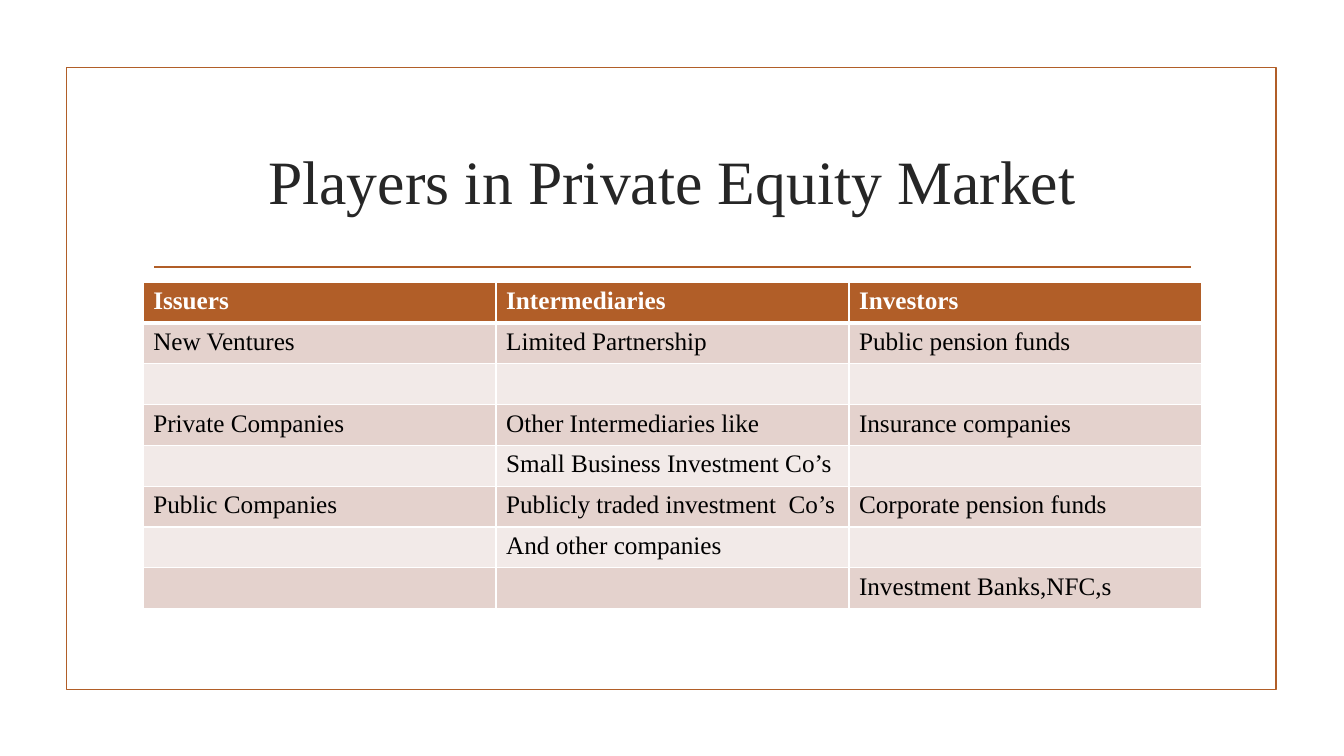
from lxml import etree
from pptx import Presentation
from pptx.dml.color import RGBColor
from pptx.enum.shapes import MSO_CONNECTOR, MSO_SHAPE
from pptx.enum.text import MSO_ANCHOR, PP_ALIGN
from pptx.oxml.ns import qn
from pptx.util import Inches, Pt

RECT = MSO_SHAPE.RECTANGLE
STRAIGHT = MSO_CONNECTOR.STRAIGHT
MIDDLE = MSO_ANCHOR.MIDDLE
CENTER = PP_ALIGN.CENTER

RUST = RGBColor(0xB1, 0x5E, 0x28)
ROSE = RGBColor(0xE4, 0xD2, 0xCD)
PALE = RGBColor(0xF2, 0xEA, 0xE8)
WHITE = RGBColor(0xFF, 0xFF, 0xFF)
BLACK = RGBColor(0, 0, 0)
CHARCOAL = RGBColor(0x26, 0x26, 0x26)
FONT = "Times New Roman"

LEFT, WIDTH = Inches(1.42), Inches(10.5)
ROW_H = Inches(0.405)
ROWS = [
    ("Issuers", "Intermediaries", "Investors"),
    ("New Ventures", "Limited Partnership", "Public pension funds"),
    ("", "", ""),
    ("Private Companies", "Other Intermediaries like", "Insurance companies"),
    ("", "Small Business Investment Co’s", ""),
    ("Public Companies", "Publicly traded investment  Co’s", "Corporate pension funds"),
    ("", "And other companies", ""),
    ("", "", "Investment Banks,NFC,s"),
]


def set_font(p, size, color, bold=False):
    p.font.name = FONT
    p.font.size = Pt(size)
    p.font.bold = bold
    p.font.color.rgb = color


def add_border(cell, side, width):
    ln = etree.SubElement(cell._tc.get_or_add_tcPr(), qn(f"a:ln{side}"), w=str(Pt(width)))
    fill = etree.SubElement(ln, qn("a:solidFill"))
    etree.SubElement(fill, qn("a:srgbClr"), val=str(WHITE))


prs = Presentation()
prs.slide_width, prs.slide_height = Inches(13.33), Inches(7.5)
s = prs.slides.add_slide(prs.slide_layouts[5])

frame = s.shapes.add_shape(RECT, Inches(0.66), Inches(0.67), Inches(12), Inches(6.17))
frame.shadow.inherit = False
frame.fill.background()
frame.line.color.rgb = RUST
frame.line.width = Pt(1.25)

rule = s.shapes.add_connector(STRAIGHT, Inches(1.53), Inches(2.65), Inches(11.81), Inches(2.65))
rule.line.color.rgb = RUST
rule.line.width = Pt(1.25)
etree.SubElement(rule._element.spPr, qn("a:effectLst"))

title = s.shapes.title
title.left, title.top, title.width, title.height = LEFT, Inches(1.07), WIDTH, Inches(1.43)
tf = title.text_frame
tf.text = "Players in Private Equity Market"
tf.vertical_anchor = MIDDLE
p = tf.paragraphs[0]
p.alignment = CENTER
set_font(p, 44, CHARCOAL)

table = s.shapes.add_table(len(ROWS), 3, LEFT, Inches(2.8), WIDTH, ROW_H * len(ROWS)).table
for i, row in enumerate(ROWS):
    table.rows[i].height = ROW_H
    header = i == 0
    for j, text in enumerate(row):
        cell = table.cell(i, j)
        cell.text = text
        set_font(cell.text_frame.paragraphs[0], 18, WHITE if header else BLACK, header)
        for side in "LRTB":
            under_header = (i, side) in ((0, "B"), (1, "T"))
            add_border(cell, side, 3 if under_header else 1)
        cell.fill.solid()
        cell.fill.fore_color.rgb = RUST if header else ROSE if i % 2 else PALE

prs.save("out.pptx")
